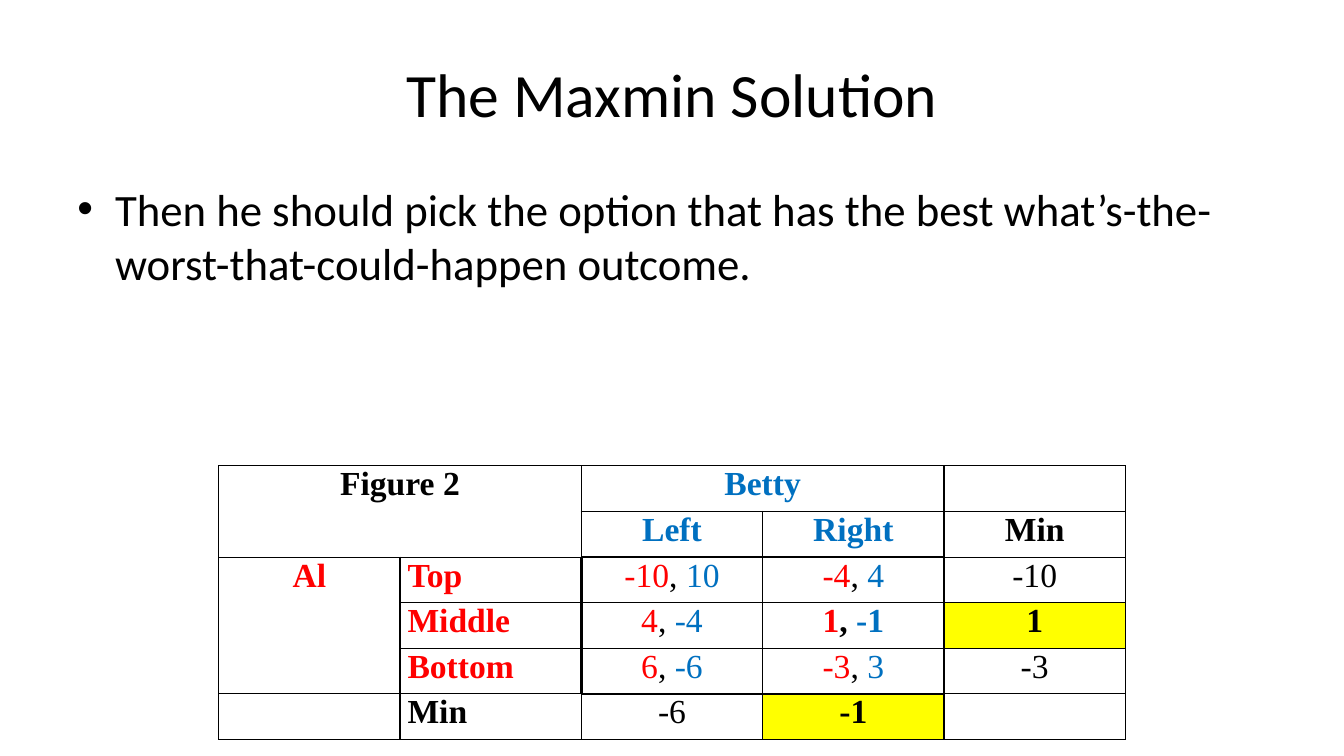
from lxml.etree import SubElement
from pptx import Presentation
from pptx.dml.color import RGBColor
from pptx.enum.text import MSO_ANCHOR as Anchor, PP_ALIGN as Align
from pptx.oxml.ns import qn
from pptx.util import Cm, Pt

TITLE = "The Maxmin Solution"
ADVICE = "Then he should pick the option that has the best what’s-the-worst-that-could-happen outcome."
LABELS = {
    (0, 0): ("Figure 2", "ink"),
    (0, 2): ("Betty", "betty"),
    (1, 2): ("Left", "betty"),
    (1, 3): ("Right", "betty"),
    (1, 4): ("Min", "ink"),
    (2, 0): ("Al", "al"),
    (2, 1): ("Top", "al"),
    (3, 1): ("Middle", "al"),
    (4, 1): ("Bottom", "al"),
    (5, 1): ("Min", "ink"),
}
PAYOFFS = [
    [("-10", "10"), ("-4", "4")],
    [("4", "-4"), ("1", "-1")],
    [("6", "-6"), ("-3", "3")],
]
ROW_MINS = ["-10", "1", "-3"]
COLUMN_MINS = ["-6", "-1"]
MAXMIN_ROW, MAXMIN_COLUMN = 3, 3
MERGES = [((0, 0), (1, 1)), ((0, 2), (0, 3)), ((2, 0), (4, 0))]

THEME = {
    "ink": "000000", "al": "FF0000", "betty": "0070C0", "best": "FFFF00",
    "text_font": "Calibri", "table_font": "Times New Roman",
    "title_size": 44, "body_size": 32, "table_size": 24,
    "thin": 1, "thick": 2.25,
}
ROWS, COLUMNS = 6, 5
FIRST_ROW = FIRST_COLUMN = 2
COLUMN_WIDTH, ROW_HEIGHT = Cm(4.57), Cm(1.15)
SIDES = {"L": (0, -1), "R": (0, 1), "T": (-1, 0), "B": (1, 0)}


def write(frame, runs, font="text_font", size="body_size", bold=False, align=Align.LEFT):
    paragraph = frame.paragraphs[0]
    paragraph.alignment = align
    for words, color in runs:
        run = paragraph.add_run()
        run.text = words
        run.font.name = THEME[font]
        run.font.size = Pt(THEME[size])
        run.font.bold = bold
        run.font.color.rgb = RGBColor.from_string(THEME[color])
    return paragraph


def add_frame(slide, top, height):
    frame = slide.shapes.add_textbox(Cm(1.7), top, Cm(30.48), height).text_frame
    frame.word_wrap = True
    return frame


def is_payoff(row, column):
    return (0 <= row - FIRST_ROW < len(PAYOFFS)
            and 0 <= column - FIRST_COLUMN < len(PAYOFFS[0]))


def draw_borders(cell, row, column):
    properties = cell._tc.get_or_add_tcPr()
    for side, (down, across) in SIDES.items():
        on_frame = is_payoff(row, column) != is_payoff(row + down, column + across)
        width = Pt(THEME["thick" if on_frame else "thin"])
        line = SubElement(properties, qn("a:ln" + side), w=str(width))
        fill = SubElement(line, qn("a:solidFill"))
        SubElement(fill, qn("a:srgbClr"), val=THEME["ink"])


def table_entries():
    entries = {place: ([label], True) for place, label in LABELS.items()}
    for row, pairs in enumerate(PAYOFFS, FIRST_ROW):
        for column, (al, betty) in enumerate(pairs, FIRST_COLUMN):
            solution = (row, column) == (MAXMIN_ROW, MAXMIN_COLUMN)
            entries[row, column] = ([(al, "al"), (", ", "ink"), (betty, "betty")], solution)
    for row, least in enumerate(ROW_MINS, FIRST_ROW):
        entries[row, COLUMNS - 1] = ([(least, "ink")], row == MAXMIN_ROW)
    for column, least in enumerate(COLUMN_MINS, FIRST_COLUMN):
        entries[ROWS - 1, column] = ([(least, "ink")], column == MAXMIN_COLUMN)
    return entries


def add_game(slide):
    game = slide.shapes.add_table(ROWS, COLUMNS, Cm(5.51), Cm(11.74),
                                  COLUMN_WIDTH * COLUMNS, ROW_HEIGHT * ROWS).table
    game.first_row = game.horz_banding = False
    highlights = {(MAXMIN_ROW, COLUMNS - 1), (ROWS - 1, MAXMIN_COLUMN)}
    entries = table_entries()
    for row in range(ROWS):
        for column in range(COLUMNS):
            cell = game.cell(row, column)
            cell.margin_left = cell.margin_right = Cm(0.19)
            cell.margin_top = cell.margin_bottom = 0
            draw_borders(cell, row, column)
            if (row, column) in highlights:
                cell.fill.solid()
                cell.fill.fore_color.rgb = RGBColor.from_string(THEME["best"])
            else:
                cell.fill.background()
            if (row, column) in entries:
                runs, bold = entries[row, column]
                write(cell.text_frame, runs, font="table_font", size="table_size", bold=bold,
                      align=Align.LEFT if column == 1 else Align.CENTER)
    for start, end in MERGES:
        game.cell(*start).merge(game.cell(*end))


def main():
    deck = Presentation()
    deck.slide_width, deck.slide_height = Cm(33.87), Cm(19.05)
    slide = deck.slides.add_slide(deck.slide_layouts[6])

    heading = add_frame(slide, Cm(0.76), Cm(3.18))
    heading.vertical_anchor = Anchor.MIDDLE
    write(heading, [(TITLE, "ink")], size="title_size", align=Align.CENTER)

    advice = write(add_frame(slide, Cm(4.45), Cm(12.57)), [(ADVICE, "ink")])
    indents = advice._p.get_or_add_pPr()
    indents.set("marL", str(Cm(0.95)))
    indents.set("indent", str(-Cm(0.95)))
    SubElement(indents, qn("a:buFont"), typeface="Arial")
    SubElement(indents, qn("a:buChar"), char="•")

    add_game(slide)
    deck.save("out.pptx")


if __name__ == "__main__":
    main()
